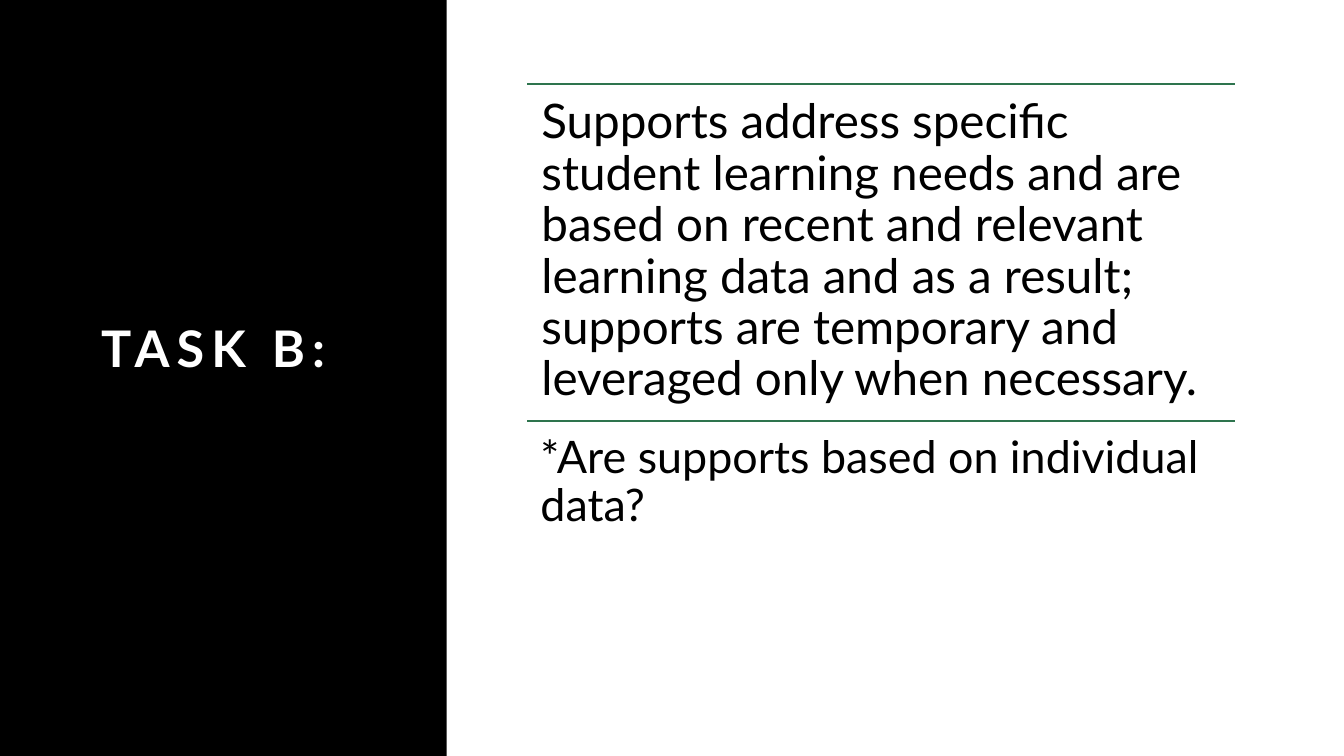
import pptx
import pptx.util
import pptx.dml.color
import pptx.enum.shapes
import pptx.enum.text
import pptx.oxml.ns
import lxml.etree

BLACK = pptx.dml.color.RGBColor(0x00, 0x00, 0x00)
WHITE = pptx.dml.color.RGBColor(0xFF, 0xFF, 0xFF)
GREEN = pptx.dml.color.RGBColor(0x2E, 0x74, 0x4E)
Inches = pptx.util.Inches
Pt = pptx.util.Pt
PP_ALIGN = pptx.enum.text.PP_ALIGN
MSO_ANCHOR = pptx.enum.text.MSO_ANCHOR

prs = pptx.Presentation()
prs.slide_width = Inches(13.33)
prs.slide_height = Inches(7.5)
s = prs.slides.add_slide(prs.slide_layouts[6])


def add_text(text, left, top, width, height, size, color=BLACK, bold=False,
             align=PP_ALIGN.LEFT, anchor=MSO_ANCHOR.TOP, line_spacing=0.9,
             inset=0.1, bottom_inset=None, tracking=0):
    sp = s.shapes.add_textbox(Inches(left), Inches(top), Inches(width), Inches(height))
    tf = sp.text_frame
    tf.word_wrap = True
    tf.vertical_anchor = anchor
    tf.margin_left = tf.margin_right = tf.margin_top = Inches(inset)
    tf.margin_bottom = Inches(inset if bottom_inset is None else bottom_inset)
    p = tf.paragraphs[0]
    p.alignment = align
    p.line_spacing = line_spacing
    r = p.add_run()
    r.text = text
    r.font.name = "Lato"
    r.font.size = Pt(size)
    r.font.bold = bold
    r.font.color.rgb = color
    if tracking:
        r.font._element.set("spc", str(tracking * 100))


panel = s.shapes.add_shape(pptx.enum.shapes.MSO_SHAPE.RECTANGLE,
                           0, 0, Inches(4.43), prs.slide_height)
panel.shadow.inherit = False
panel.fill.solid()
panel.fill.fore_color.rgb = BLACK
panel.line.fill.background()

add_text("TASK B: ", 0.5, 1.86, 3.42, 3.77, 36, color=WHITE, bold=True,
         align=PP_ALIGN.CENTER, anchor=MSO_ANCHOR.MIDDLE, line_spacing=1.2,
         inset=0.05, bottom_inset=0.77, tracking=5)

left, width = 5.23, 7.02
rows = [
    (0.83, 3.35, 34, 0.14,
     "Supports address specific student learning needs and are based on recent "
     "and relevant learning data and as a result; supports are temporary and "
     "leveraged only when necessary."),
    (4.18, 2.47, 32, 0.13, "*Are supports based on individual data?"),
]
for top, height, size, inset, text in rows:
    rule = s.shapes.add_connector(pptx.enum.shapes.MSO_CONNECTOR.STRAIGHT,
                                  Inches(left), Inches(top),
                                  Inches(left + width), Inches(top))
    rule.line.color.rgb = GREEN
    rule.line.width = Pt(1.5)
    lxml.etree.SubElement(rule._element.spPr, pptx.oxml.ns.qn("a:effectLst"))
    add_text(text, left, top, width, height, size, inset=inset)

prs.save("out.pptx")
